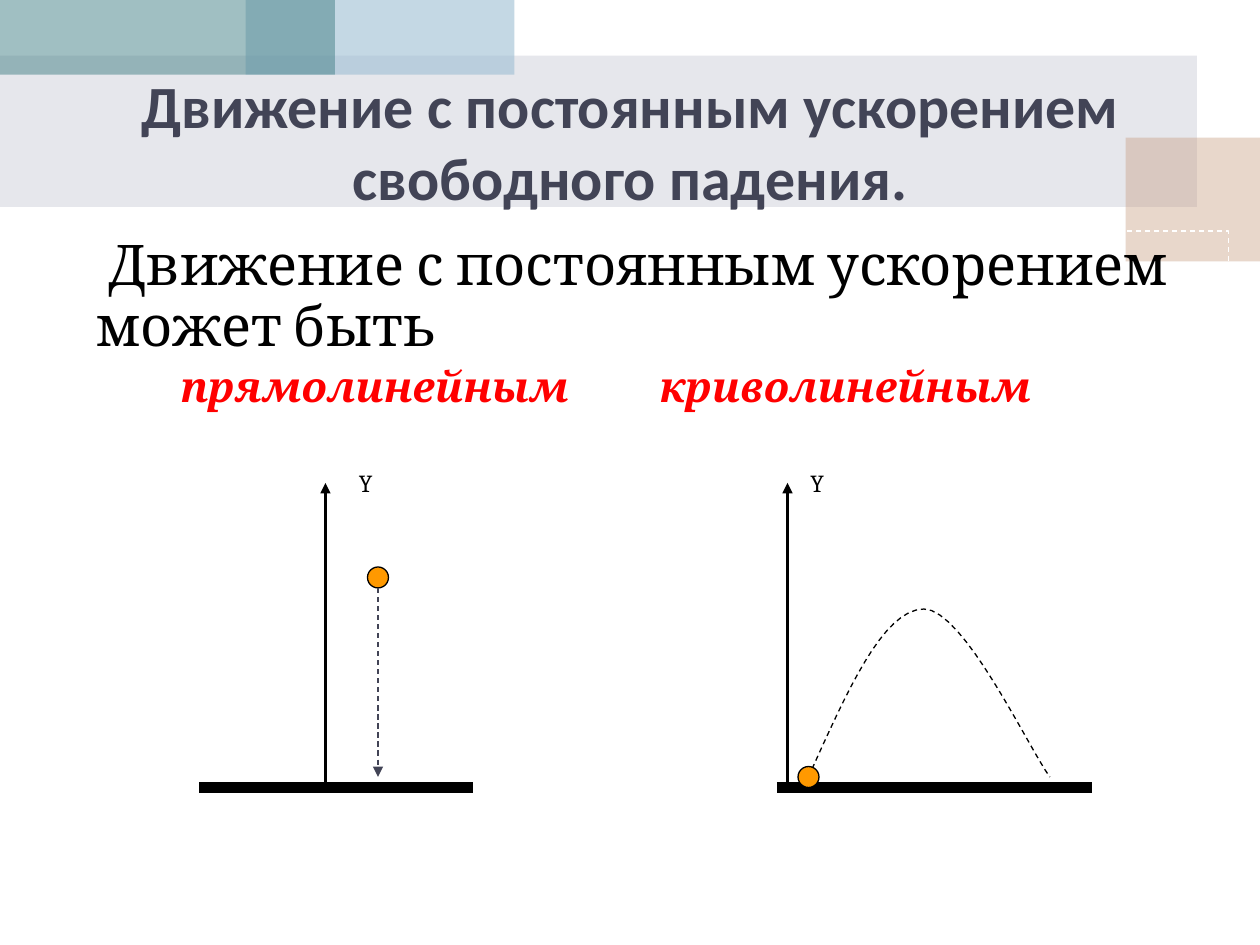
"""Builds a physics slide on straight and curved motion in free fall."""
from lxml.etree import SubElement
from pptx import Presentation
from pptx.dml.color import RGBColor
from pptx.enum.dml import MSO_LINE as Dash
from pptx.enum.shapes import MSO_CONNECTOR as Connector, MSO_SHAPE as Shape
from pptx.enum.text import MSO_ANCHOR as Anchor, MSO_AUTO_SIZE as AutoSize, PP_ALIGN as Align
from pptx.oxml.ns import qn
from pptx.util import Emu, Pt

EMU_PER_PX = 7620
BLACK = RGBColor(0x00, 0x00, 0x00)
WHITE = RGBColor(0xFF, 0xFF, 0xFF)
RED = RGBColor(0xFF, 0x00, 0x00)
ORANGE = RGBColor(0xFF, 0x99, 0x00)
SLATE = RGBColor(0x42, 0x44, 0x56)
LAVENDER = RGBColor(0xAE, 0xB0, 0xC1)
TAN = RGBColor(0xC6, 0x9B, 0x7E)
SKY = RGBColor(0x9D, 0xBE, 0xD3)
TEAL = RGBColor(0x43, 0x80, 0x86)


def px(*lengths):
    return [Emu(round(length * EMU_PER_PX)) for length in lengths]


def bezier(start, first, second, end, steps=16):
    for step in range(1, steps + 1):
        t = step / steps
        weights = ((1 - t) ** 3, 3 * t * (1 - t) ** 2, 3 * t * t * (1 - t), t ** 3)
        points = (start, first, second, end)
        yield tuple(sum(w * p[axis] for w, p in zip(weights, points)) for axis in (0, 1))


class SlideBuilder:
    """Holds the shared style and the current slide."""

    heading = {"name": "Calibri", "size": Pt(34.2), "bold": True}
    body = {"name": "Cambria", "size": Pt(32)}
    kinds = {"name": "Cambria", "size": Pt(24), "bold": True, "italic": True}
    label = {"name": "Cambria", "size": Pt(14)}

    def __init__(self, deck):
        self.slide = deck.slides.add_slide(deck.slide_layouts[6])
        self.shapes = self.slide.shapes

    def outline(self, line, color, width=0.75, dash=None):
        line.color.rgb = color
        line.width = Pt(width)
        if dash:
            line.dash_style = dash

    def shape(self, kind, bounds, fill=None, opacity=100, border=None, dash=None):
        shape = self.shapes.add_shape(kind, *px(*bounds))
        shape.shadow.inherit = False
        if fill is None:
            shape.fill.background()
        else:
            shape.fill.solid()
            shape.fill.fore_color.rgb = fill
        if opacity < 100:
            color = shape._element.spPr.find(qn("a:solidFill")).find(qn("a:srgbClr"))
            SubElement(color, qn("a:alpha"), val=str(opacity * 1000))
        if border is None:
            shape.line.fill.background()
        else:
            self.outline(shape.line, border, dash=dash)
        return shape

    def text_box(self, bounds, **frame_format):
        frame = self.shapes.add_textbox(*px(*bounds)).text_frame
        for name, value in {"word_wrap": True, **frame_format}.items():
            setattr(frame, name, value)
        return frame

    def add_text(self, para, text, font, color, **para_format):
        for name, value in para_format.items():
            setattr(para, name, value)
        span = para.add_run()
        span.text = text
        for name, value in font.items():
            setattr(span.font, name, value)
        span.font.color.rgb = color

    def tabs(self, para, *stops):
        stop_list = SubElement(para._p.get_or_add_pPr(), qn("a:tabLst"))
        for stop in px(*stops):
            SubElement(stop_list, qn("a:tab"), pos=str(stop), algn="l")

    def line(self, start, end, color=BLACK, width=0.75, dash=None, arrow=False):
        line = self.shapes.add_connector(Connector.STRAIGHT, *px(*start, *end))
        self.outline(line.line, color, width, dash)
        if arrow:
            SubElement(line._element.spPr.find(qn("a:ln")), qn("a:tailEnd"), type="triangle")
        SubElement(line._element.spPr, qn("a:effectLst"))

    def curve(self, start, *segments):
        builder = self.shapes.build_freeform(*px(*start))
        for first, second, end in segments:
            points = bezier(start, first, second, end)
            builder.add_line_segments([px(*point) for point in points], close=False)
            start = end
        curve = builder.convert_to_shape()
        curve.shadow.inherit = False
        curve.fill.background()
        self.outline(curve.line, BLACK, dash=Dash.DASH)

    def axes(self, ground_left, ground_right, axis, label_left):
        self.line((ground_left, 750), (ground_right, 750), width=6)
        self.line((axis, 750), (axis, 460), width=1.5, arrow=True)
        frame = self.text_box((label_left, 440, 50, 40), auto_size=AutoSize.SHAPE_TO_FIT_TEXT)
        self.add_text(frame.paragraphs[0], "Y", self.label, BLACK)

    def ball(self, left, top):
        self.shape(Shape.OVAL, (left, top, 20, 20), ORANGE, border=BLACK)


def main():
    deck = Presentation()
    deck.slide_width, deck.slide_height = px(1200, 900)
    page = SlideBuilder(deck)

    for bounds, fill, opacity in (
        ((0, 53, 1140, 144), LAVENDER, 30),
        ((1072, 131, 128, 118), TAN, 40),
        ((234, 0, 256, 71), SKY, 60),
        ((0, 0, 319, 71), TEAL, 50),
    ):
        page.shape(Shape.RECTANGLE, bounds, fill, opacity)

    title = page.text_box((60, 71, 1080, 126), vertical_anchor=Anchor.MIDDLE)
    page.add_text(title.paragraphs[0], "Движение с постоянным ускорением свободного падения.",
                  page.heading, SLATE, alignment=Align.CENTER)

    box = page.shape(Shape.RECTANGLE, (80, 220, 1090, 594), border=WHITE, dash=Dash.DASH)
    frame = box.text_frame
    frame.word_wrap = True
    frame.vertical_anchor = Anchor.TOP
    spacing = {"alignment": Align.LEFT, "line_spacing": 0.9}
    page.add_text(frame.paragraphs[0], " Движение с постоянным ускорением может быть",
                  page.body, BLACK, space_before=Pt(6.4), **spacing)
    kinds = frame.add_paragraph()
    page.add_text(kinds, "\tпрямолинейным\tкриволинейным", page.kinds, RED,
                  space_before=Pt(4.8), **spacing)
    page.tabs(kinds, 80, 537)

    page.axes(190, 450, 310, 330)
    page.ball(350, 540)
    page.line((360, 560), (360, 740), SLATE, dash=Dash.DASH, arrow=True)

    page.axes(740, 1040, 750, 760)
    page.curve((770, 740),
               ((806, 660), (841, 580), (880, 580)),
               ((918, 580), (980, 713), (1000, 740)))
    page.ball(760, 730)

    deck.save("out.pptx")


if __name__ == "__main__":
    main()
